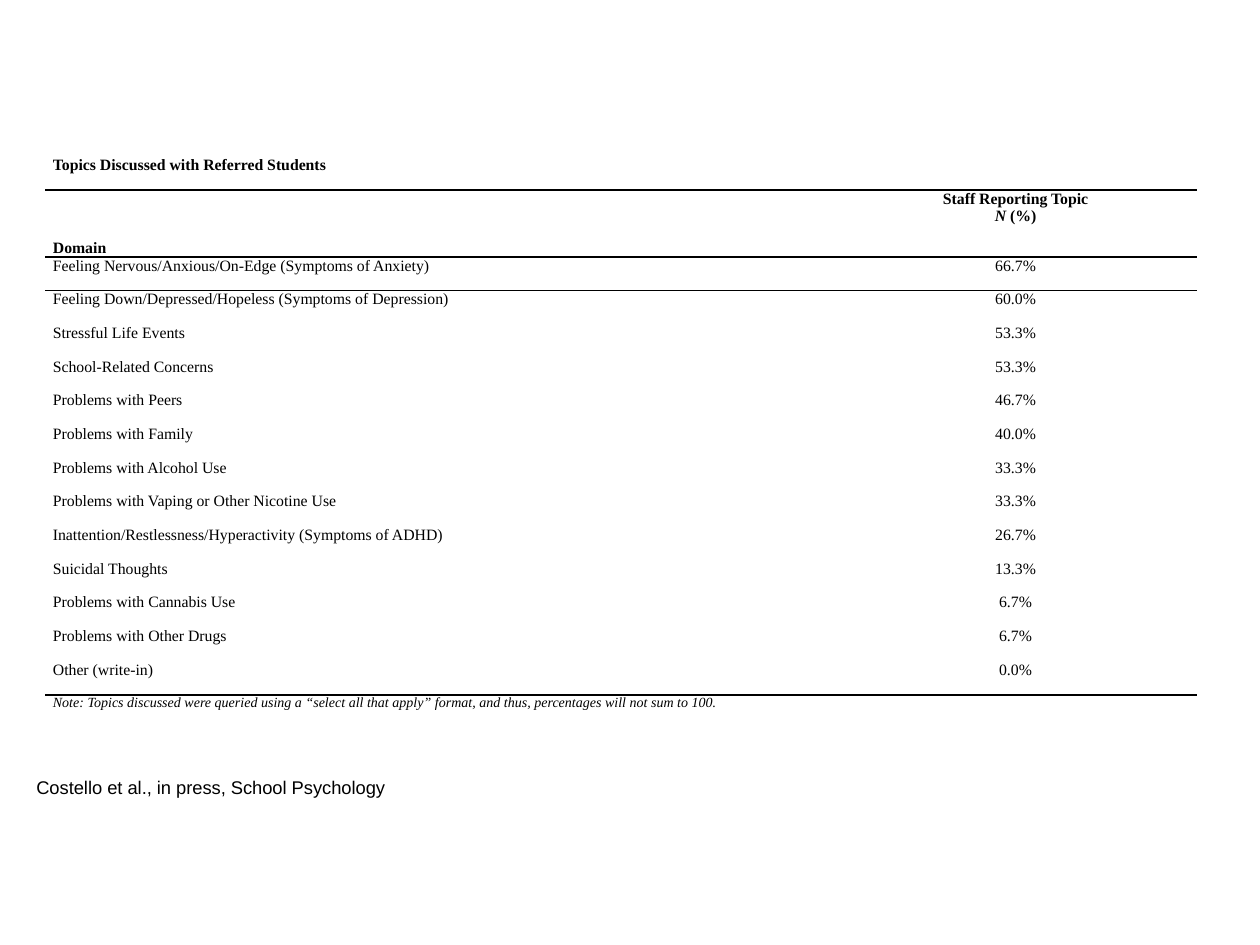
from dataclasses import dataclass

from lxml.etree import SubElement
from pptx import Presentation
from pptx.dml.color import RGBColor
from pptx.enum.text import MSO_ANCHOR, MSO_AUTO_SIZE, PP_ALIGN
from pptx.oxml.ns import qn
from pptx.util import Inches, Pt


@dataclass(frozen=True)
class Theme:
    ink: RGBColor = RGBColor(0, 0, 0)
    table_font: str = "Times New Roman"
    source_font: str = "Arial"
    table_size: Pt = Pt(9)
    note_size: Pt = Pt(8)
    source_size: Pt = Pt(10.5)
    rule_width: Pt = Pt(1)


THEME = Theme()
PLAIN_STYLE = "{2D5ABB26-0587-4C30-8999-92F81FD0307C}"  # no style, no grid
TABLE_TEXT = {"name": THEME.table_font, "size": THEME.table_size}
HEADING = TABLE_TEXT | {"bold": True}
NOTE = TABLE_TEXT | {"size": THEME.note_size, "italic": True}
SOURCE = {"name": THEME.source_font, "size": THEME.source_size}

TITLE = "Topics Discussed with Referred Students"
TOPICS = [
    ("Feeling Nervous/Anxious/On-Edge (Symptoms of Anxiety)", "66.7%"),
    ("Feeling Down/Depressed/Hopeless (Symptoms of Depression)", "60.0%"),
    ("Stressful Life Events", "53.3%"),
    ("School-Related Concerns", "53.3%"),
    ("Problems with Peers", "46.7%"),
    ("Problems with Family", "40.0%"),
    ("Problems with Alcohol Use", "33.3%"),
    ("Problems with Vaping or Other Nicotine Use", "33.3%"),
    ("Inattention/Restlessness/Hyperactivity (Symptoms of ADHD)", "26.7%"),
    ("Suicidal Thoughts", "13.3%"),
    ("Problems with Cannabis Use", "6.7%"),
    ("Problems with Other Drugs", "6.7%"),
    ("Other (write-in)", "0.0%"),
]
NOTE_TEXT = ("Note: Topics discussed were queried using a “select all that apply” format, "
             "and thus, percentages will not sum to 100.")


def add_span(para, text, formats):
    span = para.add_run()
    span.text = text
    span.font.color.rgb = THEME.ink
    for name, value in formats.items():
        setattr(span.font, name, value)


def fill_cell(cell, text, formats, align=PP_ALIGN.LEFT):
    para = cell.text_frame.paragraphs[0]
    para.alignment = align
    add_span(para, text, formats)


def add_rule(cell, side):
    """Draw a border on one side of a cell: lnT for top, lnB for bottom."""
    line = SubElement(cell._tc.get_or_add_tcPr(), qn(f"a:{side}"), w=str(THEME.rule_width))
    fill = SubElement(line, qn("a:solidFill"))
    SubElement(fill, qn("a:srgbClr"), val=str(THEME.ink))


def format_grid(table):
    """Clear the banded style and rule off the title, header and topic rows."""
    properties = table._tbl.tblPr
    properties.find(qn("a:tableStyleId")).text = PLAIN_STYLE
    table.first_row = table.horz_banding = False
    last = len(table.rows) - 1
    ruled_below = {0, 1, last - 1}
    cell_format = {"margin_left": Inches(0.06), "margin_right": Inches(0.06),
                   "margin_top": 0, "margin_bottom": 0}
    for index, row in enumerate(table.rows):
        for cell in row.cells:
            for name, value in cell_format.items():
                setattr(cell, name, value)
            if index - 1 in ruled_below:
                add_rule(cell, "lnT")
            if index in ruled_below:
                add_rule(cell, "lnB")
            cell.fill.background()


def add_topics_table(page, left, top, width, height):
    title_height, header_height, note_height = Inches(0.27), Inches(0.53), Inches(0.45)
    topic_height = (height - title_height - header_height - note_height) // len(TOPICS)
    heights = [title_height, header_height, *[topic_height] * len(TOPICS), note_height]
    table = page.shapes.add_table(len(heights), 2, left, top, width, height).table
    percent_width = Inches(2.88)
    table.columns[0].width = width - percent_width
    table.columns[1].width = percent_width
    for row, row_height in zip(table.rows, heights):
        row.height = row_height
    format_grid(table)

    last = len(heights) - 1
    for index, text, formats in ((0, TITLE, HEADING), (last, NOTE_TEXT, NOTE)):
        table.cell(index, 0).merge(table.cell(index, 1))
        fill_cell(table.cell(index, 0), text, formats)

    domain, percent = table.rows[1].cells
    domain.vertical_anchor = MSO_ANCHOR.BOTTOM
    fill_cell(domain, "Domain", HEADING)
    fill_cell(percent, "Staff Reporting Topic", HEADING, PP_ALIGN.CENTER)
    para = percent.text_frame.add_paragraph()
    para.alignment = PP_ALIGN.CENTER
    add_span(para, "N ", HEADING | {"italic": True})
    add_span(para, "(%)", HEADING)

    for index, (topic, share) in enumerate(TOPICS, start=2):
        fill_cell(table.cell(index, 0), topic, TABLE_TEXT)
        fill_cell(table.cell(index, 1), share, TABLE_TEXT, PP_ALIGN.CENTER)


def add_source(page, left, top, width, height):
    frame = page.shapes.add_textbox(left, top, width, height).text_frame
    frame.word_wrap = False
    frame.auto_size = MSO_AUTO_SIZE.SHAPE_TO_FIT_TEXT
    add_span(frame.paragraphs[0], "Costello et al., in press, School Psychology", SOURCE)


def main():
    deck = Presentation()
    deck.slide_width, deck.slide_height = Inches(10), Inches(7.5)
    page = deck.slides.add_slide(deck.slide_layouts[6])
    add_topics_table(page, Inches(0.36), Inches(1.24), Inches(9.14), Inches(4.73))
    add_source(page, Inches(0.19), Inches(6.11), Inches(3.02), Inches(0.28))
    deck.save("out.pptx")


if __name__ == "__main__":
    main()
